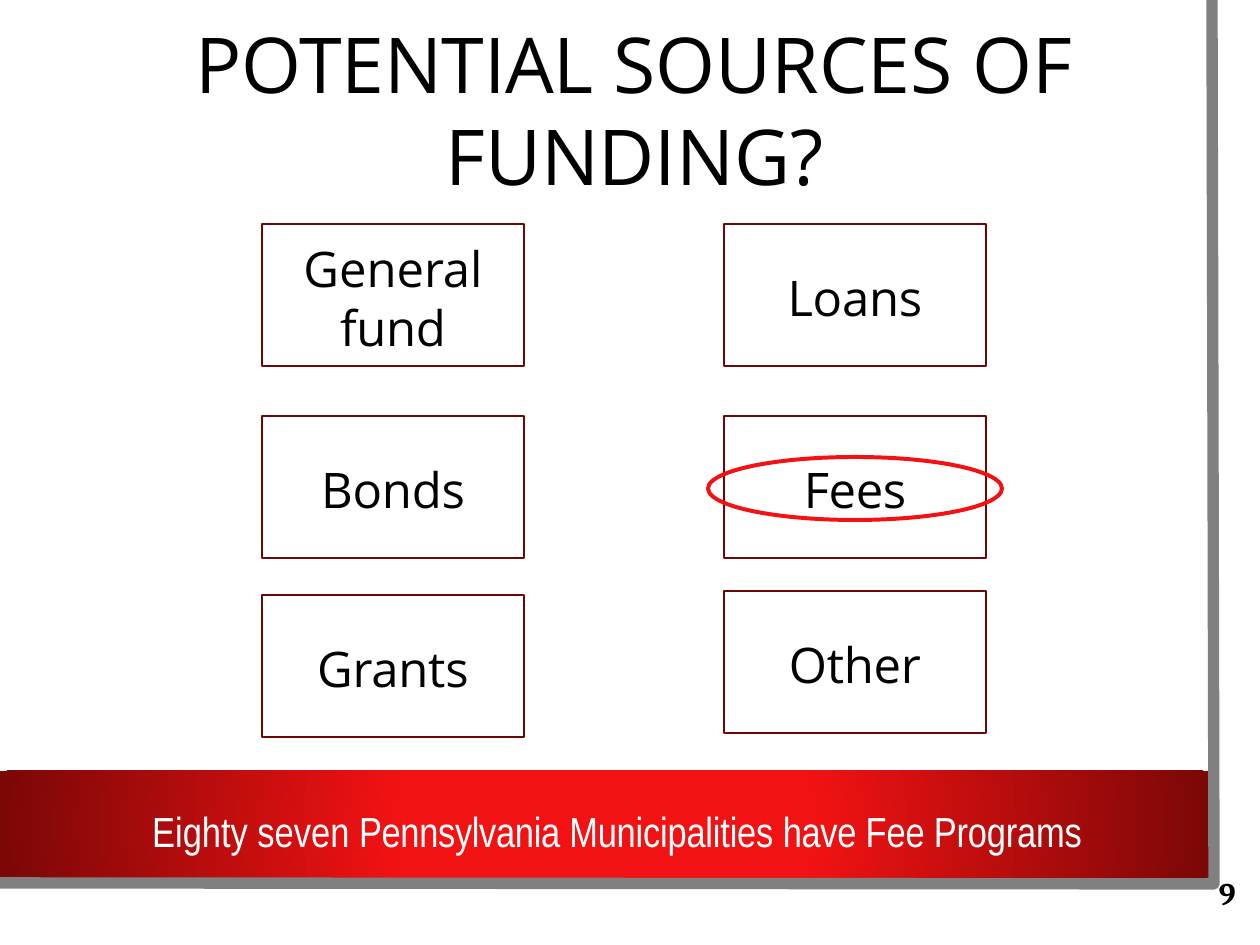
from lxml import etree
from pptx import Presentation
from pptx import util as u
from pptx.dml.color import RGBColor
from pptx.enum import shapes, text
from pptx.oxml import parse_xml
from pptx.oxml.ns import nsdecls, qn

HUES = {"ink": "000000", "paper": "FFFFFF", "maroon": "6A0808",
        "red": "F21213", "dark": "7B0707", "gray": "808080"}
KIND = shapes.MSO_SHAPE
MID = text.MSO_ANCHOR.MIDDLE
TOP = text.MSO_ANCHOR.TOP
CENTER = text.PP_ALIGN.CENTER
LEFT = text.PP_ALIGN.LEFT


def px(num):
    return u.Emu(round(num * 914400 / 126))


def hue(name):
    return RGBColor.from_string(HUES[name])


def style(shape, fill=None, line=None, width=1.5):
    shape.shadow.inherit = False
    if fill:
        shape.fill.solid()
        shape.fill.fore_color.rgb = hue(fill)
    else:
        shape.fill.background()
    if line:
        shape.line.color.rgb = hue(line)
        shape.line.width = u.Pt(width)
    else:
        shape.line.fill.background()


def write(shape, runs, size, font, color="ink", bold=False,
          align=CENTER, anchor=MID, inset=(0, 0, 0, 0)):
    frame = shape.text_frame
    frame.word_wrap = True
    frame.vertical_anchor = anchor
    (frame.margin_left, frame.margin_top,
     frame.margin_right, frame.margin_bottom) = map(px, inset)
    para = frame.paragraphs[0]
    para.alignment = align
    for words, gap in runs:
        run = para.add_run()
        run.text = words
        run.font.size = u.Pt(size)
        run.font.name = font
        run.font.bold = bold
        run.font.color.rgb = hue(color)
        if gap:
            run.font._element.set("spc", str(gap))


def label(slide, area, runs, size, font, **opts):
    box = slide.shapes.add_textbox(*map(px, area))
    write(box, runs, size, font, **opts)


def band(slide, area):
    bar = slide.shapes.add_shape(KIND.RECTANGLE, *map(px, area))
    style(bar, "red")
    stops = "".join(
        f'<a:gs pos="{pos}"><a:srgbClr val="{HUES[name]}"/></a:gs>'
        for pos, name in ((34000, "red"), (100000, "dark")))
    grad = parse_xml(
        f'<a:gradFill {nsdecls("a")} rotWithShape="1"><a:gsLst>{stops}</a:gsLst>'
        '<a:path path="circle"><a:fillToRect l="50000" t="50000" '
        'r="50000" b="50000"/></a:path></a:gradFill>')
    props = bar._element.spPr
    props.replace(props.find(qn("a:solidFill")), grad)


def edge(slide, points):
    start, *rest = points
    pen = slide.shapes.build_freeform(*map(px, start))
    pen.add_line_segments([tuple(map(px, spot)) for spot in rest], close=False)
    style(pen.convert_to_shape(), None, "gray", 6.5)


def card(slide, left, top, runs):
    box = slide.shapes.add_shape(
        KIND.RECTANGLE, *map(px, (left, top, 262, 142)))
    style(box, "paper", "maroon")
    write(box, runs, 28, "Open Sans", inset=(12, 4, 12, 0))


def ring(slide, area):
    oval = slide.shapes.add_shape(KIND.OVAL, *map(px, area))
    style(oval, None, "red", 2.28)


def main():
    deck = Presentation()
    deck.slide_width, deck.slide_height = px(1260), px(945)
    slide = deck.slides.add_slide(deck.slide_layouts[6])

    band(slide, (0, 771, 1210, 107))
    edge(slide, [(1212, 0), (1214, 884), (-3, 883)])
    label(slide, (59, 0, 1075, 202),
          [("POTENTIAL ", -20), ("SOURCES OF ", 0), ("FUNDING?", -10)],
          44, "Open Sans", inset=(76, 15, 0, 0))
    label(slide, (1218, 872, 28, 40), [("9", -20)], 18, "Cambria",
          bold=True, align=LEFT, anchor=TOP, inset=(1, 2, 0, 0))
    label(slide, (32, 804, 1169, 53),
          [("Eighty seven ", 0), ("Pennsylvania ", -20),
           ("Municipalities ", -10), ("have ", -20), ("Fee Programs", -10)],
          24, "Arial Narrow", color="paper", anchor=TOP, inset=(1, 2, 0, 0))

    columns = (
        (262, ((224, [("General ", 0), ("fund", -20)]),
               (416, [("Bonds", -10)]),
               (595, [("Grants", -10)]))),
        (724, ((224, [("Loans", -10)]),
               (416, [("Fees", -20)]),
               (591, [("Other", -10)]))),
    )
    for left, cards in columns:
        for top, runs in cards:
            card(slide, left, top, runs)
    ring(slide, (708, 457, 294, 63))

    deck.save("out.pptx")


if __name__ == "__main__":
    main()
